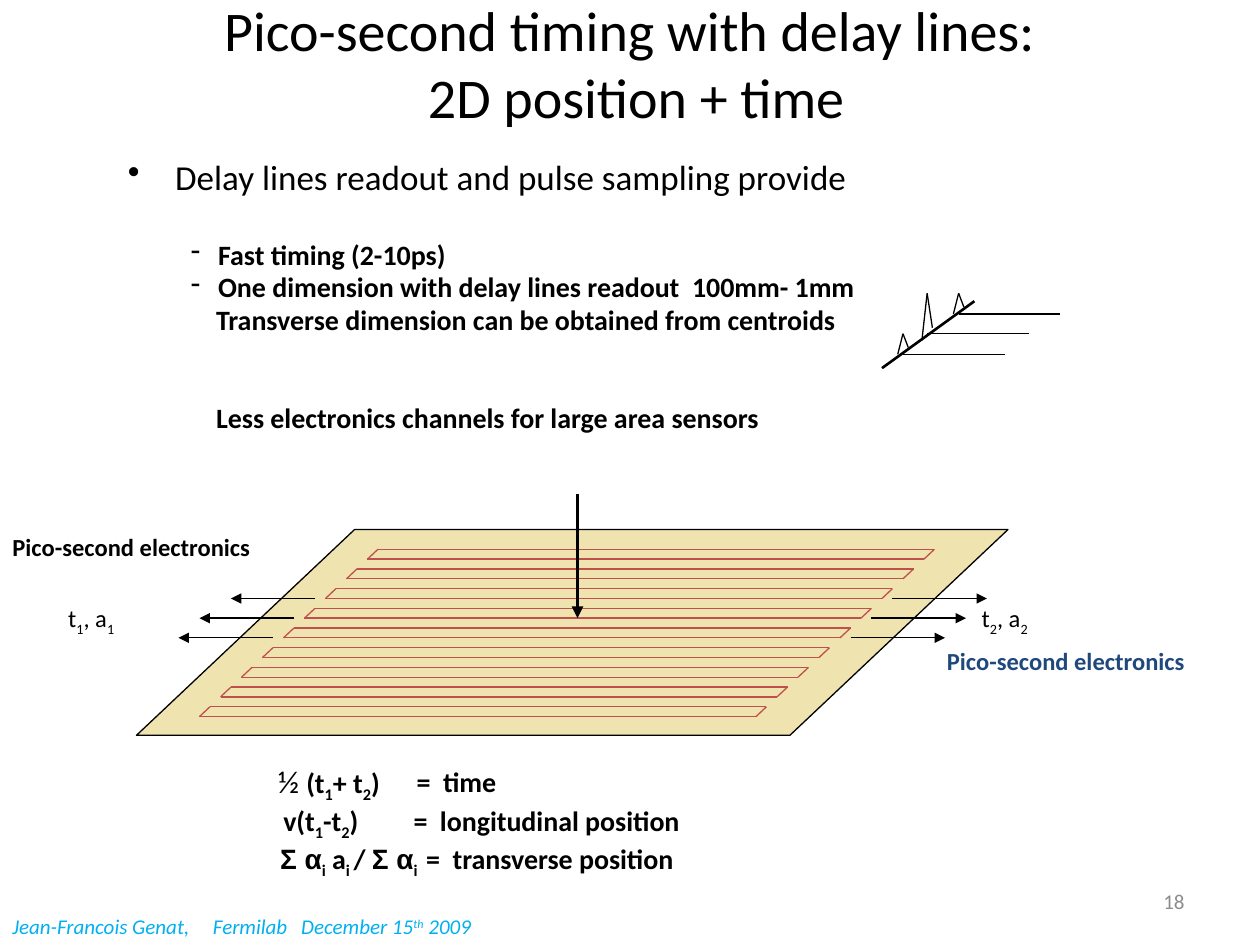
from lxml.etree import SubElement
from pptx import Presentation
from pptx.dml.color import RGBColor
from pptx.enum.shapes import MSO_CONNECTOR, MSO_SHAPE
from pptx.enum.text import MSO_ANCHOR, PP_ALIGN
from pptx.oxml.ns import qn
from pptx.util import Inches, Pt

BLACK = RGBColor(0x00, 0x00, 0x00)
SAND = RGBColor(0xEF, 0xE3, 0xAF)
RED = RGBColor(0xC0, 0x50, 0x4D)
NAVY = RGBColor(0x1F, 0x49, 0x7D)
CYAN = RGBColor(0x00, 0xB0, 0xF0)
GREY = RGBColor(0x8C, 0x8C, 0x8C)

deck = Presentation()
deck.slide_width, deck.slide_height = Inches(10), Inches(7.5)
slide = deck.slides.add_slide(deck.slide_layouts[6])
COL = deck.slide_width / 120
ROW = deck.slide_height / 96


def write(left, top, width, height, lines, size, color=BLACK, bold=False,
          italic=False, align=PP_ALIGN.LEFT, anchor=MSO_ANCHOR.TOP, shift=-25000):
    box = slide.shapes.add_textbox(int(left * COL), int(top * ROW), int(width * COL), int(height * ROW))
    frame = box.text_frame
    frame.word_wrap = True
    frame.vertical_anchor = anchor
    for number, line in enumerate(lines):
        paragraph = frame.add_paragraph() if number else frame.paragraphs[0]
        paragraph.alignment = align
        font = paragraph.font
        font.name, font.size, font.bold, font.italic = "Calibri", Pt(size), bold, italic
        font.color.rgb = color
        for position, piece in enumerate(line.split("_")):
            if piece:
                run = paragraph.add_run()
                run.text = piece
                if position % 2:
                    run.font._element.set("baseline", str(shift))
    return frame.paragraphs


def draw(x1, y1, x2, y2, color=BLACK, weight=0.75, arrow=False):
    stroke = slide.shapes.add_connector(
        MSO_CONNECTOR.STRAIGHT, int(x1 * COL), int(y1 * ROW), int(x2 * COL), int(y2 * ROW))
    stroke.line.color.rgb = color
    stroke.line.width = Pt(weight)
    if arrow:
        SubElement(stroke.line._get_or_add_ln(), qn("a:tailEnd"), type="triangle")
    SubElement(stroke._element.spPr, qn("a:effectLst"))


title = write(0, 0, 120, 12.8, ["Pico-second timing with delay lines:"], 32,
              align=PP_ALIGN.CENTER, anchor=MSO_ANCHOR.MIDDLE)[0]
title.add_line_break()
title.add_run().text = " 2D position + time"

benefits = write(11, 16, 105, 31, [
    "Delay lines readout and pulse sampling provide",
    "Fast timing (2-10ps)",
    "One dimension with delay lines readout  100mm- 1mm",
    "Transverse dimension can be obtained from centroids",
    "Less electronics channels for large area sensors",
], 16, bold=True)
benefits[0].font.size = Pt(20)
benefits[0].font.bold = False
benefit_layout = [(4, 4.5, 4.5, "•"), (26.7, 8.6, 2.6, "-"), (3.2, 8.6, 2.6, "-"),
                  (3.2, 8.4, 0, None), (40.8, 8.4, 0, None)]
for benefit, (space, margin, hang, bullet) in zip(benefits, benefit_layout):
    benefit.line_spacing = 0.8
    benefit.space_before = Pt(space)
    properties = benefit._p.get_or_add_pPr()
    properties.set("marL", str(int(margin * COL)))
    properties.set("indent", str(int(-hang * COL)))
    if bullet:
        mark = SubElement(properties, qn("a:buChar"), char=bullet)
        properties.find(qn("a:defRPr")).addprevious(mark)
        lead = benefit.runs[0].font
        lead.size, lead.bold = benefit.font.size, benefit.font.bold

PLATE_TOP = 53.8
plate = slide.shapes.add_shape(MSO_SHAPE.PARALLELOGRAM, int(13 * COL), int(PLATE_TOP * ROW),
                               int(83 * COL), int(20.9 * ROW))
plate.adjustments[0] = 1.06
plate.shadow.inherit = False
plate.fill.solid()
plate.fill.fore_color.rgb = SAND
plate.line.color.rgb = BLACK
plate.line.width = Pt(0.75)

STRIP_LENGTH = 53
for strip in range(9):
    start = 36 - 2 * strip
    end = start + STRIP_LENGTH
    upper = PLATE_TOP + 2 + 2 * strip
    lower = upper + 1
    draw(start, upper, end, upper, RED)
    draw(start - 1, lower, end - 1, lower, RED)
    draw(start, upper, start - 1, lower, RED)
    draw(end, upper, end - 1, lower, RED)

draw(55, 50.2, 55, PLATE_TOP + 9, weight=2.25, arrow=True)
for signal, left_tip in enumerate((22, 19, 17)):
    level = PLATE_TOP + 7 + 2 * signal
    draw(30 - 2 * signal, level, left_tip, level, arrow=True)
    draw(85 - 2 * signal, level, 94 - 2 * signal, level, arrow=True)

write(5.3, 60.8, 10, 4.4, ["t_1_, a_1_"], 14, anchor=MSO_ANCHOR.MIDDLE)
write(92.3, 60.8, 10, 4.4, ["t_2_, a_2_"], 14, anchor=MSO_ANCHOR.MIDDLE)
write(0, 53.4, 26, 4.4, ["Pico-second electronics"], 14, bold=True)
write(89, 65, 26, 4.4, ["Pico-second electronics"], 14, NAVY, bold=True)

FORMULA_TOP, FORMULA_PITCH = 77.05, 3.9
formulas = [(25.3, "½ __(t_1_+ t_2_)", 38.5, "=  time"),
            (25.8, "v(t_1_-t_2_)", 38.2, "=  longitudinal position"),
            (25.5, "Σ α_i_ a_i _/ __Σ α_i_", 39.4, "=  transverse position")]
for number, (term_left, term, meaning_left, meaning) in enumerate(formulas):
    top = FORMULA_TOP + number * FORMULA_PITCH
    half_lift = 0.25 if "½" in term else 0
    term_line = write(term_left, top - half_lift, 16, 4.7, [term], 16, bold=True)[0]
    write(meaning_left, top, 32, 4.7, [meaning], 16, bold=True)
    for symbol in term_line.runs:
        if "½" in symbol.text:
            symbol.font.size, symbol.font.bold = Pt(18), False
        if "Σ" in symbol.text:
            symbol.font.name = "Arial"

for left, credit in [(0, "Jean-Francois Genat,"), (19.1, "Fermilab"), (27.5, "December 15_th_ 2009")]:
    write(left, 92.2, 22, 3.8, [credit], 12, CYAN, italic=True, shift=30000)

draw(84, 37.4, 92.8, 30.6, weight=1.5)
for x, wire, foot, peak, tail in [(86, 36, 36, 33.9, 35.3), (88.3, 33.9, 34.6, 29.8, 33.3),
                                  (91.3, 31.9, 31.9, 29.8, 31.2)]:
    draw(x - 0.5, foot, x, peak)
    draw(x, peak, x + 0.5, tail)
    draw(x, wire, x + 9.7, wire)

write(86, 89, 28, 5.1, ["18"], 12, GREY, align=PP_ALIGN.RIGHT, anchor=MSO_ANCHOR.MIDDLE)

deck.save("out.pptx")
